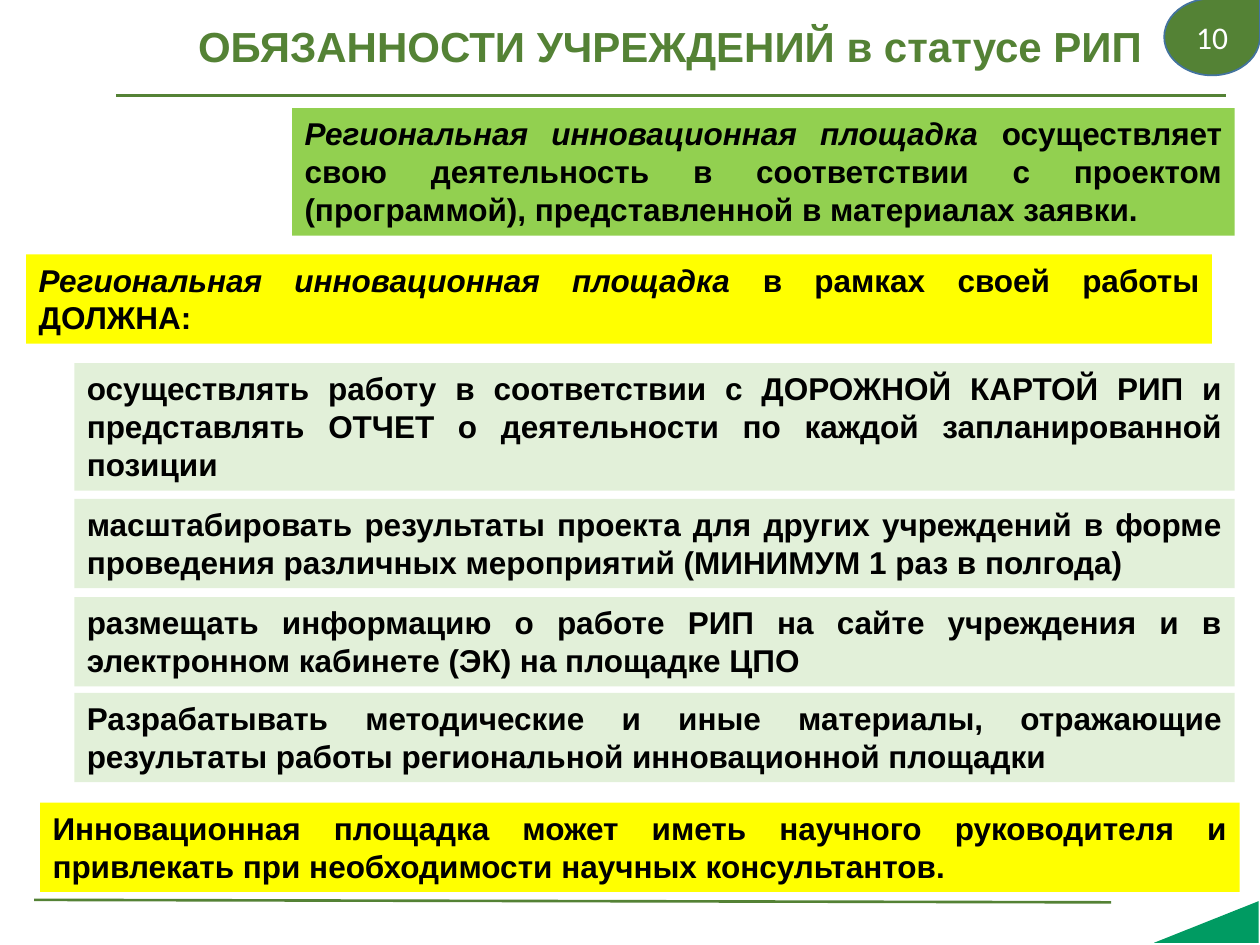
from lxml.etree import SubElement
from pptx import Presentation
from pptx.dml.color import RGBColor
from pptx.enum.shapes import MSO_CONNECTOR, MSO_SHAPE
from pptx.enum.text import MSO_ANCHOR, PP_ALIGN
from pptx.oxml.ns import qn
from pptx.util import Cm, Pt

GREEN = "548235"
LIME = "92D050"
YELLOW = "FFFF00"
PALE = "E2F0D9"
BODY = {"name": "Arial", "size": Pt(18), "bold": True}
TITLE = {"name": "Arial", "size": Pt(24), "bold": True}
NUMBER = {"name": "Calibri", "size": Pt(18)}


def color(value):
    return RGBColor.from_string(value)


def write(shape, runs, font_format, text_color, alignment, anchor):
    frame = shape.text_frame
    frame.word_wrap = True
    frame.vertical_anchor = anchor
    paragraph = frame.paragraphs[0]
    paragraph.alignment = alignment
    for text, italic in runs:
        run = paragraph.add_run()
        run.text = text
        for name, value in font_format.items():
            setattr(run.font, name, value)
        run.font.italic = italic
        run.font.color.rgb = color(text_color)
    return paragraph


presentation = Presentation()
presentation.slide_width = Cm(25.4)
presentation.slide_height = Cm(19.05)
slide = presentation.slides.add_slide(presentation.slide_layouts[6])

for ends in [(2.34, 1.93, 24.71, 1.93), (0.69, 18.14, 22.4, 18.19)]:
    rule = slide.shapes.add_connector(MSO_CONNECTOR.STRAIGHT, *map(Cm, ends))
    rule.line.color.rgb = color(GREEN)
    rule.line.width = Pt(1.5)
    SubElement(rule._element.spPr, qn("a:effectLst"))

corner = slide.shapes.add_shape(
    MSO_SHAPE.RIGHT_TRIANGLE, Cm(23.9), Cm(17.53), Cm(0.84), Cm(2.11))
corner.rotation = 270
corner.shadow.inherit = False
corner.fill.solid()
corner.fill.fore_color.rgb = color("009B62")
corner.line.fill.background()

title = slide.shapes.add_textbox(Cm(2.03), Cm(0.13), Cm(22.96), Cm(1.7))
heading = write(title, [("ОБЯЗАННОСТИ УЧРЕЖДЕНИЙ в статусе РИП", False)],
                TITLE, GREEN, PP_ALIGN.CENTER, MSO_ANCHOR.MIDDLE)
heading.line_spacing = 0.9

two_lines, three_lines = 1.8, 2.57
duty_left, duty_width = 1.5, 23.39
blocks = [
    (5.89, 2.18, 19, three_lines, LIME, [
        ("Региональная инновационная площадка", True),
        (" осуществляет свою деятельность в соответствии с проектом "
         "(программой), представленной в материалах заявки. ", False)]),
    (0.53, 5.13, 23.9, two_lines, YELLOW, [
        ("Региональная инновационная площадка ", True),
        ("в рамках своей работы ДОЛЖНА:", False)]),
    (duty_left, 7.32, duty_width, three_lines, PALE, [
        ("осуществлять работу в соответствии с ДОРОЖНОЙ КАРТОЙ РИП и "
         "представлять ОТЧЕТ о деятельности по каждой запланированной "
         "позиции", False)]),
    (duty_left, 10.06, duty_width, two_lines, PALE, [
        ("масштабировать результаты проекта для других учреждений в форме "
         "проведения различных мероприятий (МИНИМУМ 1 раз в полгода)", False)]),
    (duty_left, 12.04, duty_width, two_lines, PALE, [
        ("размещать информацию о работе РИП на сайте учреждения и в "
         "электронном кабинете (ЭК) на площадке ЦПО ", False)]),
    (duty_left, 13.97, duty_width, two_lines, PALE, [
        ("Разрабатывать методические и иные материалы, отражающие "
         "результаты работы региональной инновационной площадки", False)]),
    (0.81, 16.18, 24.18, two_lines, YELLOW, [
        ("Инновационная площадка может иметь научного руководителя и "
         "привлекать при необходимости научных консультантов.", False)]),
]
for left, top, width, height, fill, runs in blocks:
    block = slide.shapes.add_shape(
        MSO_SHAPE.RECTANGLE, Cm(left), Cm(top), Cm(width), Cm(height))
    block.shadow.inherit = False
    block.fill.solid()
    block.fill.fore_color.rgb = color(fill)
    block.line.fill.background()
    write(block, runs, BODY, "000000", PP_ALIGN.JUSTIFY, MSO_ANCHOR.TOP)

badge = slide.shapes.add_shape(
    MSO_SHAPE.TEAR, Cm(23.47), Cm(-0.03), Cm(1.93), Cm(1.55))
badge.shadow.inherit = False
badge.fill.solid()
badge.fill.fore_color.rgb = color(GREEN)
badge.line.color.rgb = color("43739E")
badge.line.width = Pt(1)
write(badge, [("10", False)], NUMBER, "FFFFFF", PP_ALIGN.CENTER, MSO_ANCHOR.MIDDLE)

presentation.save("out.pptx")
